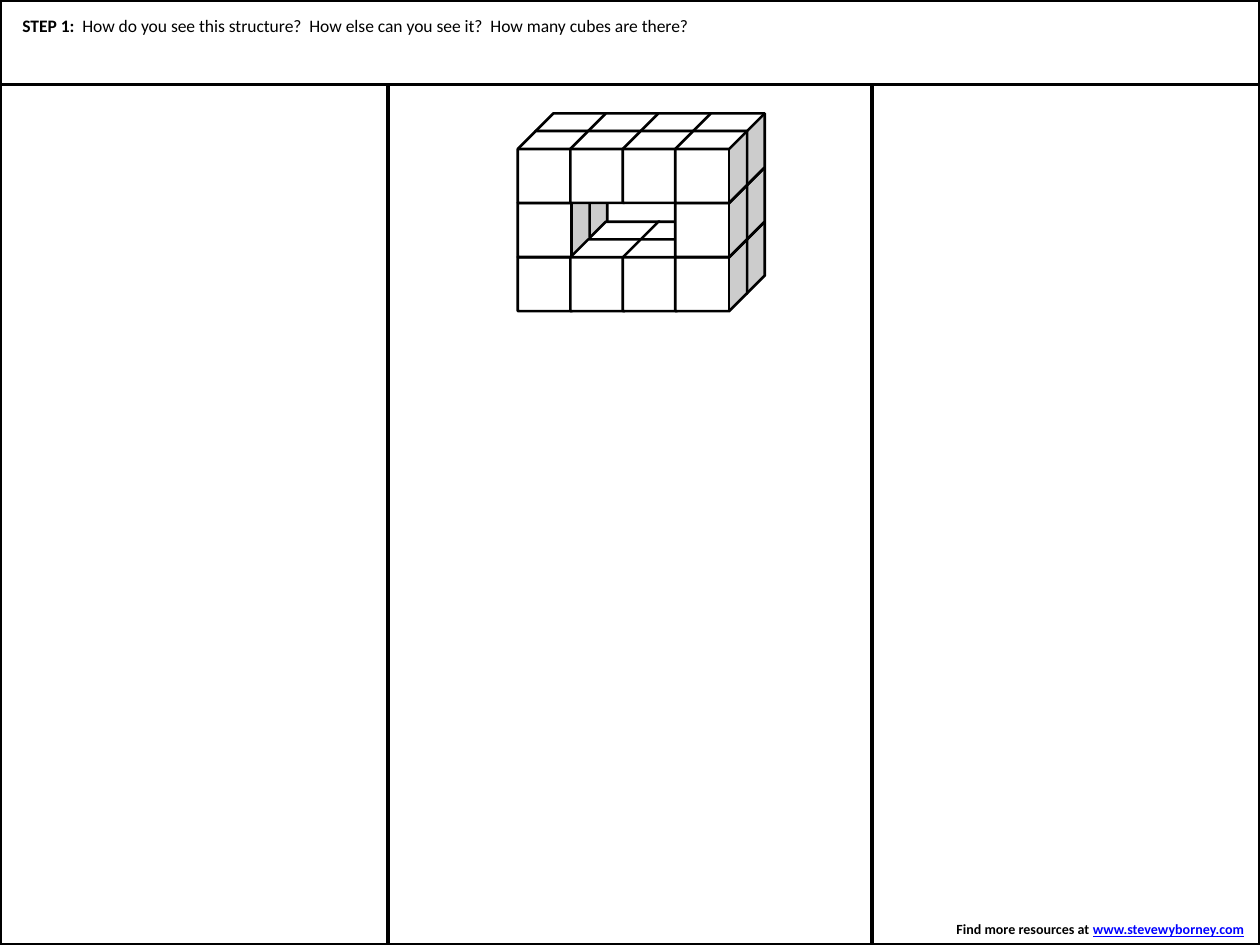
from itertools import product

from pptx import Presentation
from pptx.dml.color import RGBColor
from pptx.enum.shapes import MSO_SHAPE as Shape
from pptx.enum.text import MSO_ANCHOR as Anchor, MSO_AUTO_SIZE as AutoSize, PP_ALIGN as Align
from pptx.util import Inches, Pt

BLACK = RGBColor(0x00, 0x00, 0x00)
WHITE = RGBColor(0xFF, 0xFF, 0xFF)
LINK_BLUE = RGBColor(0x00, 0x00, 0xFF)

SIDE_WIDTH, MIDDLE_WIDTH = 3.08, 3.84
CUBE_SIZE = 0.57
COLUMN_STEP = 1.25 / 3
ROW_STEP = 0.43
LAYER_ORIGINS = [(4.25, 0.9), (4.11, 1.04)]
HOLE = {(1, 1), (2, 1)}


def add_box(shapes, kind, position, fill=None, line_width=None):
    shape = shapes.add_shape(kind, *[Inches(value) for value in position])
    shape.shadow.inherit = False
    if fill is None:
        shape.fill.background()
    else:
        shape.fill.solid()
        shape.fill.fore_color.rgb = fill
    if line_width is None:
        shape.line.fill.background()
    else:
        shape.line.color.rgb = BLACK
        shape.line.width = Pt(line_width)
    return shape


def add_runs(paragraph, size, runs):
    for text, color, styles in runs:
        run = paragraph.add_run()
        run.text = text
        run.font.color.rgb = color
        formats = {"name": "Calibri", "size": Pt(size), **styles}
        for name, value in formats.items():
            setattr(run.font, name, value)


def add_frame(slide):
    frame = slide.shapes.add_group_shape()
    left = 0
    for width in (SIDE_WIDTH, MIDDLE_WIDTH, SIDE_WIDTH):
        add_box(frame.shapes, Shape.RECTANGLE, (left, 0, width, 7.5), line_width=2)
        left += width
    add_box(frame.shapes, Shape.RECTANGLE, (0, 0, 10, 0.67), WHITE, 2)


def add_credit(slide):
    box = slide.shapes.add_textbox(Inches(7.46), Inches(7.26), Inches(2.54), Inches(0.24))
    frame = box.text_frame
    frame.word_wrap = False
    frame.auto_size = AutoSize.SHAPE_TO_FIT_TEXT
    paragraph = frame.paragraphs[0]
    paragraph.alignment = Align.RIGHT
    add_runs(paragraph, 8, [
        ("Find more resources at ", BLACK, {"bold": True}),
        ("www.stevewyborney.com", LINK_BLUE, {"bold": True, "underline": True}),
        (" ", BLACK, {"bold": True}),
    ])


def add_question(slide):
    box = add_box(slide.shapes, Shape.RECTANGLE, (0.08, 0.08, 9.83, 0.25), WHITE)
    frame = box.text_frame
    frame.word_wrap = True
    frame.vertical_anchor = Anchor.MIDDLE
    paragraph = frame.paragraphs[0]
    paragraph.alignment = Align.LEFT
    add_runs(paragraph, 10, [
        ("STEP 1:  ", BLACK, {"bold": True}),
        ("How do you see this structure?  How else can you see it?  "
         "How many cubes are there?", BLACK, {"bold": False}),
    ])


def add_structure(slide):
    structure = slide.shapes.add_group_shape()
    for (left, top), column, row in product(LAYER_ORIGINS, range(4), (2, 1, 0)):
        if (column, row) not in HOLE:
            position = (left + column * COLUMN_STEP, top + row * ROW_STEP, CUBE_SIZE, CUBE_SIZE)
            add_box(structure.shapes, Shape.CUBE, position, WHITE, 1.5)


def main():
    presentation = Presentation()
    presentation.slide_width = Inches(10)
    presentation.slide_height = Inches(7.5)
    slide = presentation.slides.add_slide(presentation.slide_layouts[6])
    add_frame(slide)
    add_credit(slide)
    add_question(slide)
    add_structure(slide)
    presentation.save("out.pptx")


if __name__ == "__main__":
    main()
